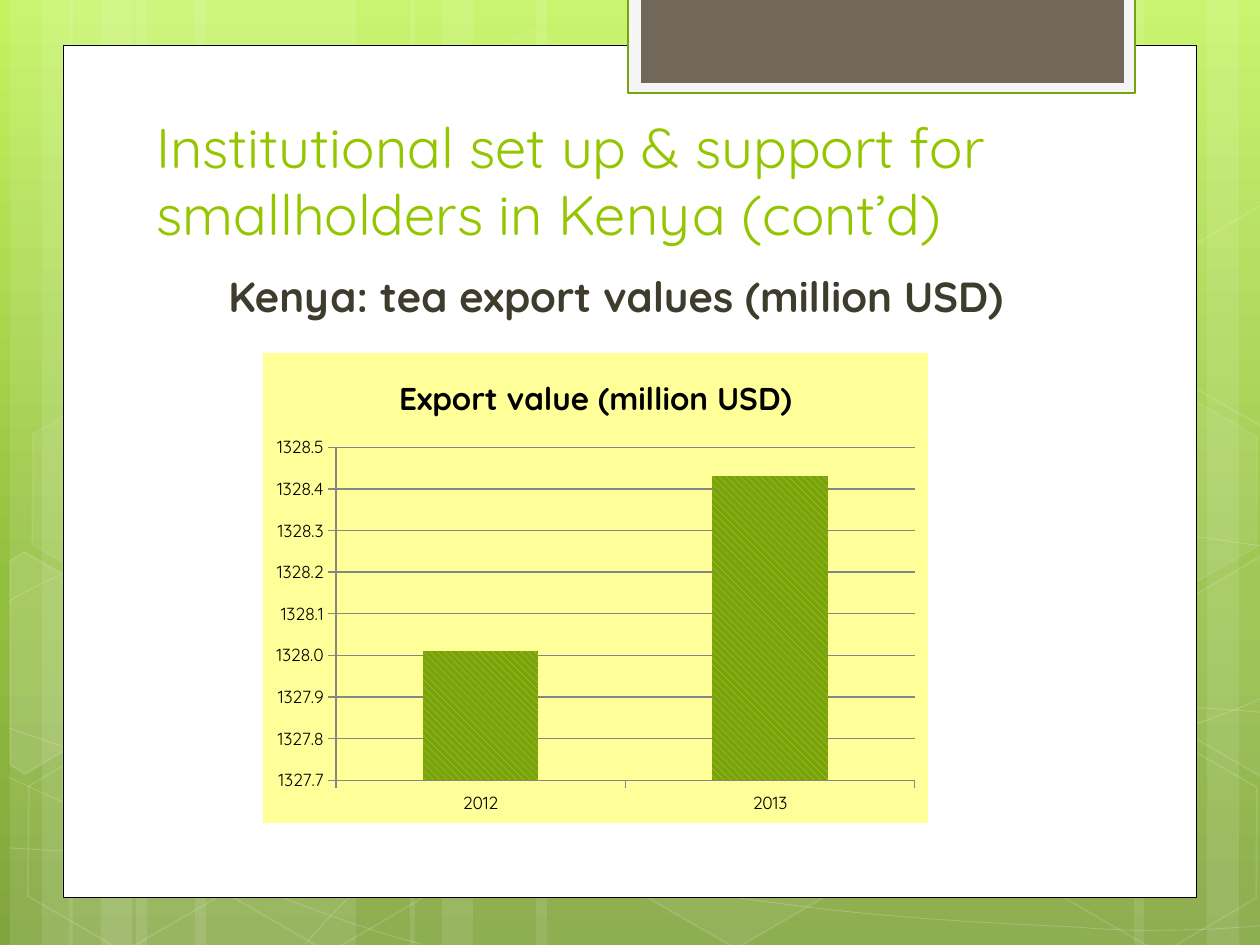
from copy import deepcopy
from dataclasses import dataclass
from math import cos, radians, sin

from lxml.etree import SubElement
from pptx import Presentation
from pptx.chart.data import CategoryChartData
from pptx.dml.color import RGBColor
from pptx.enum.chart import XL_CHART_TYPE as CHART, XL_TICK_MARK as TICK
from pptx.enum.dml import MSO_PATTERN as PATTERN
from pptx.enum.shapes import MSO_SHAPE as SHAPE
from pptx.enum.text import MSO_ANCHOR as ANCHOR, PP_ALIGN as ALIGN
from pptx.oxml import parse_xml
from pptx.oxml.ns import nsdecls, qn
from pptx.util import Emu, Pt


@dataclass(frozen=True)
class Theme:
    """Colours and type sizes of the slide."""
    font: str = "Quicksand"
    white: str = "FFFFFF"
    black: str = "000000"
    lime: str = "94C600"
    green: str = "74A510"
    amber: str = "FFC000"
    yellow: str = "FFFF99"
    olive: str = "3E3D2D"
    taupe: str = "71685A"
    pale: str = "F5F5F5"
    grey: str = "868686"
    sky: tuple = ((0, "C3F35F"), (0.62, "93BF3F"), (1, "81A53E"))
    title: int = 32
    body: int = 24
    chart_title: int = 18
    label: int = 10


T = Theme()
WIDTH, HEIGHT = 1260, 945
EMU_PER_PX = 914400 / 126
HEX_SIZE, HEX_TILT = (220, 192), 30

BAND_SETS = [(10, 220), (69, 220), (410, 388)]
RIGHT_BANDS = [(924, 220), (1207, 63), (1134, 105)]
CURVES = [
    [(9, 848), (77, 852), (145, 856), (239, 854), (334, 853), (451, 851), (577, 838),
     (703, 825), (882, 801), (998, 777), (1113, 753), (1231, 716), (1269, 694)],
    [(9, 601), (45, 581), (82, 562), (152, 543), (224, 522), (326, 496), (437, 488),
     (549, 479), (685, 478), (824, 488), (963, 498), (1193, 537), (1269, 547)],
    [(8, 777), (160, 847), (311, 916), (421, 944)],
    [(9, 728), (48, 742), (88, 756), (161, 776), (234, 795), (344, 827), (450, 848),
     (554, 869), (687, 892), (791, 905), (896, 919), (1008, 924), (1075, 927),
     (1134, 932), (1158, 930), (1191, 930), (1223, 929), (1246, 927), (1269, 925)],
    [(305, 944), (328, 919), (350, 893), (381, 871), (411, 848), (454, 823), (489, 805),
     (524, 788), (546, 780), (592, 767), (638, 755), (722, 737), (766, 728),
     (811, 719), (818, 719), (857, 717), (896, 713), (958, 709), (1000, 708),
     (1045, 707), (1116, 708), (1116, 708), (1144, 708), (1173, 708), (1201, 708),
     (1223, 709), (1245, 711), (1256, 712), (1268, 713), (1264, 712), (1268, 713)],
]
HEXAGONS = [
    (421, 45, 4, 8), (626, 742, 6, 12), (14, 745, 0, 12), (18, 393, 7, 8),
    (219, 746, 0, 12), (949, 571, 10, 12), (1051, 747, 0, 12), (1051, 396, 7, 8),
]
CUT_HEXAGONS = [
    ((45, 674), [(10, 561), (24, 552), (121, 607), (120, 718), (25, 774), (10, 765)], 10),
    ((1241, 655), [(1167, 611), (1261, 556), (1271, 562), (1271, 772), (1263, 777),
                   (1167, 722)], 4),
    ((1241, 304), [(1167, 261), (1261, 205), (1273, 212), (1271, 422), (1263, 427),
                   (1167, 372)], 0),
]


def px(n):
    """Turn pixels into EMU."""
    return Emu(round(n * EMU_PER_PX))


def rgb(color):
    """Turn a hex string into a colour."""
    return RGBColor.from_string(color)


def paint(fill, color, alpha=100):
    """Fill with a solid colour at a percentage of opacity."""
    if not color or not alpha:
        fill.background()
        return
    fill.solid()
    fill.fore_color.rgb = rgb(color)
    if alpha < 100:
        clr = fill._xPr.find(".//" + qn("a:srgbClr"))
        SubElement(clr, qn("a:alpha")).set("val", str(alpha * 1000))


def style(s, fill=None, alpha=100, line=None, width=1, line_alpha=100):
    """Set the fill and the line of a shape and drop its shadow."""
    s.shadow.inherit = False
    paint(s.fill, fill, alpha)
    paint(s.line.fill, line, line_alpha)
    if line:
        s.line.width = Pt(width)


def add_box(slide, kind, x, y, w, h, **look):
    """Add a preset shape."""
    s = slide.shapes.add_shape(kind, px(x), px(y), px(w), px(h))
    style(s, **look)
    return s


def add_outline(slide, points, close, **look):
    """Add a freeform through the given points."""
    start, *rest = [(px(x), px(y)) for x, y in points]
    builder = slide.shapes.build_freeform(*start)
    builder.add_line_segments(rest, close=close)
    s = builder.convert_to_shape()
    style(s, **look)
    return s


def add_curve(slide, knots, **look):
    """Add a chain of cubic curves, three knots to each."""
    s = add_outline(slide, knots, False, **look)
    lines = list(s.element.iter(qn("a:lnTo")))
    for i in range(0, len(lines), 3):
        curve = parse_xml(f'<a:cubicBezTo {nsdecls("a")}/>')
        lines[i].addprevious(curve)
        for line in lines[i:i + 3]:
            curve.append(line[0])
            line.getparent().remove(line)


def untilt(point, center):
    """Turn a point back by the hexagon tilt about a centre."""
    c, s = cos(radians(HEX_TILT)), sin(radians(HEX_TILT))
    dx, dy = point[0] - center[0], point[1] - center[1]
    return center[0] + dx * c + dy * s, center[1] - dx * s + dy * c


def set_font(font, size, color, bold=False):
    """Set the typeface, size, colour and weight of a font."""
    font.name, font.size, font.bold = T.font, Pt(size), bold
    font.color.rgb = rgb(color)


def add_text(slide, text, x, y, w, h, size, color, bold=False, align=ALIGN.LEFT, anchor=ANCHOR.TOP):
    """Add a wrapped text box and return its frame."""
    tf = slide.shapes.add_textbox(px(x), px(y), px(w), px(h)).text_frame
    tf.word_wrap, tf.vertical_anchor, tf.text = True, anchor, text
    p = tf.paragraphs[0]
    p.alignment = align
    set_font(p.runs[0].font, size, color, bold)
    return tf


def add_background(slide):
    """Fill the slide with a vertical gradient."""
    fill = slide.background.fill
    fill.gradient()
    fill.gradient_angle = 270
    first = slide.element.find(".//" + qn("a:gs"))
    first.addnext(deepcopy(first))
    for stop, (position, color) in zip(fill.gradient_stops, T.sky):
        stop.position, stop.color.rgb = position, rgb(color)


def add_decoration(slide):
    """Add the translucent bands, curves and hexagons."""
    left_bands = [band for x, wide in BAND_SETS
                  for band in ((x + 126, wide), (x, 63), (x + 32, 105))]
    for x, w in left_bands + RIGHT_BANDS:
        add_box(slide, SHAPE.RECTANGLE, x, 0, w, HEIGHT, fill=T.white, alpha=10)
    for knots in CURVES:
        add_curve(slide, knots, line=T.white, width=0.5, line_alpha=20)
    for x, y, alpha, line_alpha in HEXAGONS:
        s = add_box(slide, SHAPE.HEXAGON, x, y, *HEX_SIZE, fill=T.white, alpha=alpha,
                    line=T.white, line_alpha=line_alpha)
        s.rotation, s.adjustments[0] = HEX_TILT, 0.285
    for center, points, alpha in CUT_HEXAGONS:
        s = add_outline(slide, [untilt(p, center) for p in points], True, fill=T.white,
                        alpha=alpha, line=T.white, line_alpha=12)
        s.rotation = HEX_TILT


def add_export_chart(slide, x, y, w, h):
    """Add the column chart of export values."""
    name = "Export value (million USD)"
    data = CategoryChartData()
    data.categories = ["2012", "2013"]
    data.add_series(name, (1328.01, 1328.43))
    chart = slide.shapes.add_chart(CHART.COLUMN_CLUSTERED, px(x), px(y), px(w), px(h), data).chart
    set_font(chart.font, T.label, T.black)
    chart.has_legend = False
    chart.has_title = True
    tf = chart.chart_title.text_frame
    tf.text = name
    set_font(tf.paragraphs[0].runs[0].font, T.chart_title, T.black, True)
    plot = chart.plots[0]
    plot.gap_width, plot.vary_by_categories = 150, False
    fill = plot.series[0].format.fill
    fill.patterned()
    fill.pattern = PATTERN.WIDE_DOWNWARD_DIAGONAL
    fill.fore_color.rgb, fill.back_color.rgb = rgb(T.amber), rgb(T.green)
    axis = chart.value_axis
    axis.minimum_scale, axis.maximum_scale, axis.major_unit = 1327.7, 1328.5, 0.1
    axis.tick_labels.number_format = "0.0"
    axis.tick_labels.number_format_is_linked = False
    axis.has_major_gridlines = True
    for part in (axis, chart.category_axis, axis.major_gridlines):
        part.format.line.color.rgb = rgb(T.grey)
    axis.major_tick_mark = chart.category_axis.major_tick_mark = TICK.OUTSIDE
    chart._chartSpace.find(qn("c:chart")).addnext(parse_xml(
        f'<c:spPr {nsdecls("c", "a")}><a:solidFill><a:srgbClr val="{T.yellow}"/></a:solidFill>'
        '<a:ln><a:noFill/></a:ln></c:spPr>'))


def main():
    """Build the slide and save it."""
    prs = Presentation()
    prs.slide_width, prs.slide_height = px(WIDTH), px(HEIGHT)
    slide = prs.slides.add_slide(prs.slide_layouts[6])
    add_background(slide)
    add_decoration(slide)
    add_box(slide, SHAPE.RECTANGLE, 63, 45, 1134, 853, fill=T.white, line=T.black, width=0.5)
    add_box(slide, SHAPE.RECTANGLE, 628, -3, 507, 96, fill=T.pale, line=T.green, width=1.25)
    add_box(slide, SHAPE.RECTANGLE, 641, -3, 483, 86, fill=T.taupe)
    add_text(slide, "Institutional set up & support for smallholders in Kenya (cont’d)",
             144, 95, 968, 158, T.title, T.lime, anchor=ANCHOR.BOTTOM)
    tf = add_text(slide, "Kenya: tea export values (million USD)",
                  144, 264, 934, 625, T.body, T.olive, True, ALIGN.CENTER)
    tf.margin_left = px(22)
    add_export_chart(slide, 263, 353, 665, 470)
    prs.save("out.pptx")


if __name__ == "__main__":
    main()
